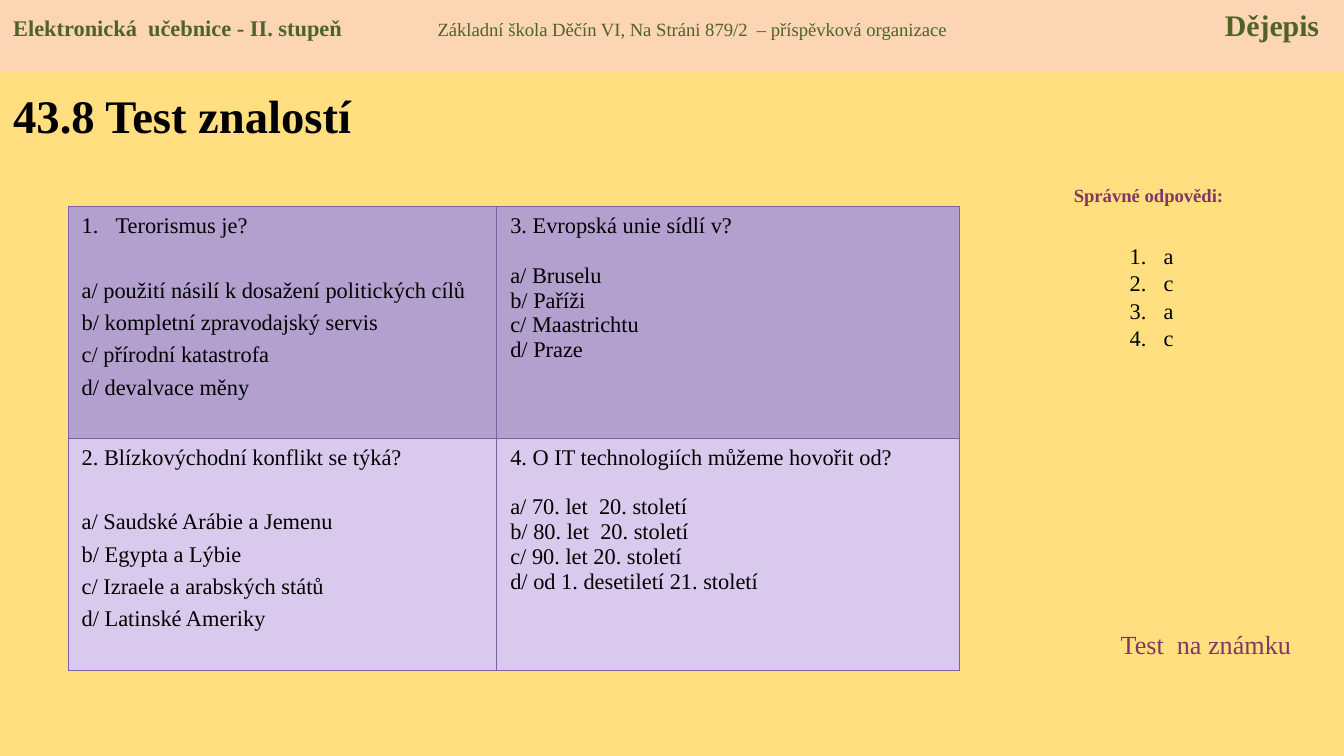
from dataclasses import dataclass

from lxml.etree import SubElement
from pptx import Presentation
from pptx.dml.color import RGBColor
from pptx.enum.shapes import MSO_SHAPE
from pptx.enum.text import MSO_ANCHOR as Anchor, PP_ALIGN as Align
from pptx.oxml.ns import qn
from pptx.util import Cm, Pt

FONT = "Times New Roman"
BLACK = RGBColor(0x00, 0x00, 0x00)
PLUM = RGBColor(0x81, 0x37, 0x63)
GREEN = RGBColor(0x4F, 0x62, 0x28)
PEACH = RGBColor(0xFC, 0xD5, 0xB5)
YELLOW = RGBColor(0xFF, 0xDF, 0x80)
PURPLE = RGBColor(0xB3, 0xA0, 0xCE)
LILAC = RGBColor(0xD9, 0xC9, 0xEC)
BORDER = RGBColor(0x7D, 0x60, 0xA0)
NUMBER_INDENT = Cm(0.64)


@dataclass
class Label:
    text: str
    left: float
    top: float
    width: float
    height: float
    size: int
    color: RGBColor
    bold: bool = False
    align: Align = Align.LEFT
    anchor: Anchor = Anchor.TOP


@dataclass
class Question:
    row: int
    column: int
    text: str
    options: list[str]
    gap: float  # points between the question and its options
    after: float = 0
    numbered: bool = False


LABELS = [
    Label("43.8 Test znalostí", 0, 1.35, 9.9, 1.65, 25, BLACK, True, anchor=Anchor.MIDDLE),
    Label("Správné odpovědi:", 19.71, 3.35, 3.99, 0.69, 10, PLUM, True, Align.CENTER),
    Label("Test  na známku", 20.93, 11.76, 3.99, 0.86, 14, PLUM),
]

QUESTIONS = [
    Question(0, 0, "Terorismus je?",
             ["a/ použití násilí k dosažení politických cílů", "b/ kompletní zpravodajský servis",
              "c/ přírodní katastrofa", "d/ devalvace měny"], 21.3, 4, True),
    Question(0, 1, "3. Evropská unie sídlí v?",
             ["a/ Bruselu", "b/ Paříži", "c/ Maastrichtu", "d/ Praze"], 13.3),
    Question(1, 0, "2. Blízkovýchodní konflikt se týká?",
             ["a/ Saudské Arábie a Jemenu", "b/ Egypta a Lýbie",
              "c/ Izraele a arabských států", "d/ Latinské Ameriky"], 21.3, 4),
    Question(1, 1, "4. O IT technologiích můžeme hovořit od?",
             ["a/ 70. let  20. století", "b/ 80. let  20. století",
              "c/ 90. let 20. století", "d/ od 1. desetiletí 21. století"], 13.3),
]


def style_span(span, size: int, color: RGBColor, bold: bool = False) -> None:
    span.font.name = FONT
    span.font.size = Pt(size)
    span.font.color.rgb = color
    span.font.bold = bold


def number_paragraph(para) -> None:
    properties = para._p.get_or_add_pPr()
    properties.set("marL", str(NUMBER_INDENT))
    properties.set("indent", str(-NUMBER_INDENT))
    SubElement(properties, qn("a:buFont"), typeface="+mj-lt")
    SubElement(properties, qn("a:buAutoNum"), type="arabicPeriod")


def add_label(page, label: Label) -> None:
    box = page.shapes.add_textbox(Cm(label.left), Cm(label.top), Cm(label.width), Cm(label.height))
    frame = box.text_frame
    frame.word_wrap = True
    frame.vertical_anchor = label.anchor
    frame.text = label.text
    para = frame.paragraphs[0]
    para.alignment = label.align
    style_span(para.runs[0], label.size, label.color, label.bold)


def add_header(page) -> None:
    band = page.shapes.add_shape(MSO_SHAPE.RECTANGLE, 0, 0, Cm(25.4), Cm(1.36))
    band.shadow.inherit = False
    band.fill.solid()
    band.fill.fore_color.rgb = PEACH
    band.line.fill.background()
    band.text_frame.word_wrap = True
    band.text_frame.vertical_anchor = Anchor.TOP
    para = band.text_frame.paragraphs[0]
    para.alignment = Align.LEFT
    tabs = SubElement(para._p.get_or_add_pPr(), qn("a:tabLst"))
    for position in (8.02, 22.9):
        SubElement(tabs, qn("a:tab"), pos=str(Cm(position)), algn="l")
    for text, size, bold in [
        ("Elektronická  učebnice - II. stupeň\t", 12, True),
        ("Základní škola Děčín VI, Na Stráni 879/2  – příspěvková organizace\t", 10, False),
        ("Dějepis", 16, True),
    ]:
        span = para.add_run()
        span.text = text
        style_span(span, size, GREEN, bold)


def add_borders(cell) -> None:
    properties = cell._tc.get_or_add_tcPr()
    for side in ("lnL", "lnR", "lnT", "lnB"):
        line = SubElement(properties, qn(f"a:{side}"), w=str(Pt(0.75)))
        fill = SubElement(line, qn("a:solidFill"))
        SubElement(fill, qn("a:srgbClr"), val=str(BORDER))


def fill_question(cell, question: Question) -> None:
    add_borders(cell)
    cell.fill.solid()
    cell.fill.fore_color.rgb = LILAC if question.row else PURPLE
    cell.text_frame.text = "\n".join([question.text, *question.options])
    for index, para in enumerate(cell.text_frame.paragraphs):
        if index == 0 and question.numbered:
            number_paragraph(para)
        para.alignment = Align.JUSTIFY
        para.space_after = Pt(question.after if index else question.gap)
        style_span(para.runs[0], 12, BLACK)


def add_test(page) -> None:
    table = page.shapes.add_table(2, 2, Cm(1.29), Cm(3.91), Cm(16.84), Cm(8.76)).table
    table.first_row = table.horz_banding = False
    for column, width in zip(table.columns, (8.1, 8.74)):
        column.width = Cm(width)
    for row in table.rows:
        row.height = Cm(4.38)
    for question in QUESTIONS:
        fill_question(table.cell(question.row, question.column), question)


def add_answers(page, answers: list[str]) -> None:
    box = page.shapes.add_textbox(Cm(21.1), Cm(3.94), Cm(1.4), Cm(3.33))
    frame = box.text_frame
    frame.word_wrap = True
    frame.margin_top = Cm(0.64)
    frame.text = "\n".join(answers)
    for para in frame.paragraphs:
        number_paragraph(para)
        para.line_spacing = Pt(14.5)
        style_span(para.runs[0], 12, BLACK)


def main() -> None:
    deck = Presentation()
    deck.slide_width, deck.slide_height = Cm(25.4), Cm(14.29)
    page = deck.slides.add_slide(deck.slide_layouts[6])
    page.background.fill.solid()
    page.background.fill.fore_color.rgb = YELLOW

    # Heading band, title and captions
    add_header(page)
    for label in LABELS:
        add_label(page, label)

    # Questions and their key
    add_test(page)
    add_answers(page, ["a", "c", "a", "c"])

    deck.save("out.pptx")


if __name__ == "__main__":
    main()
